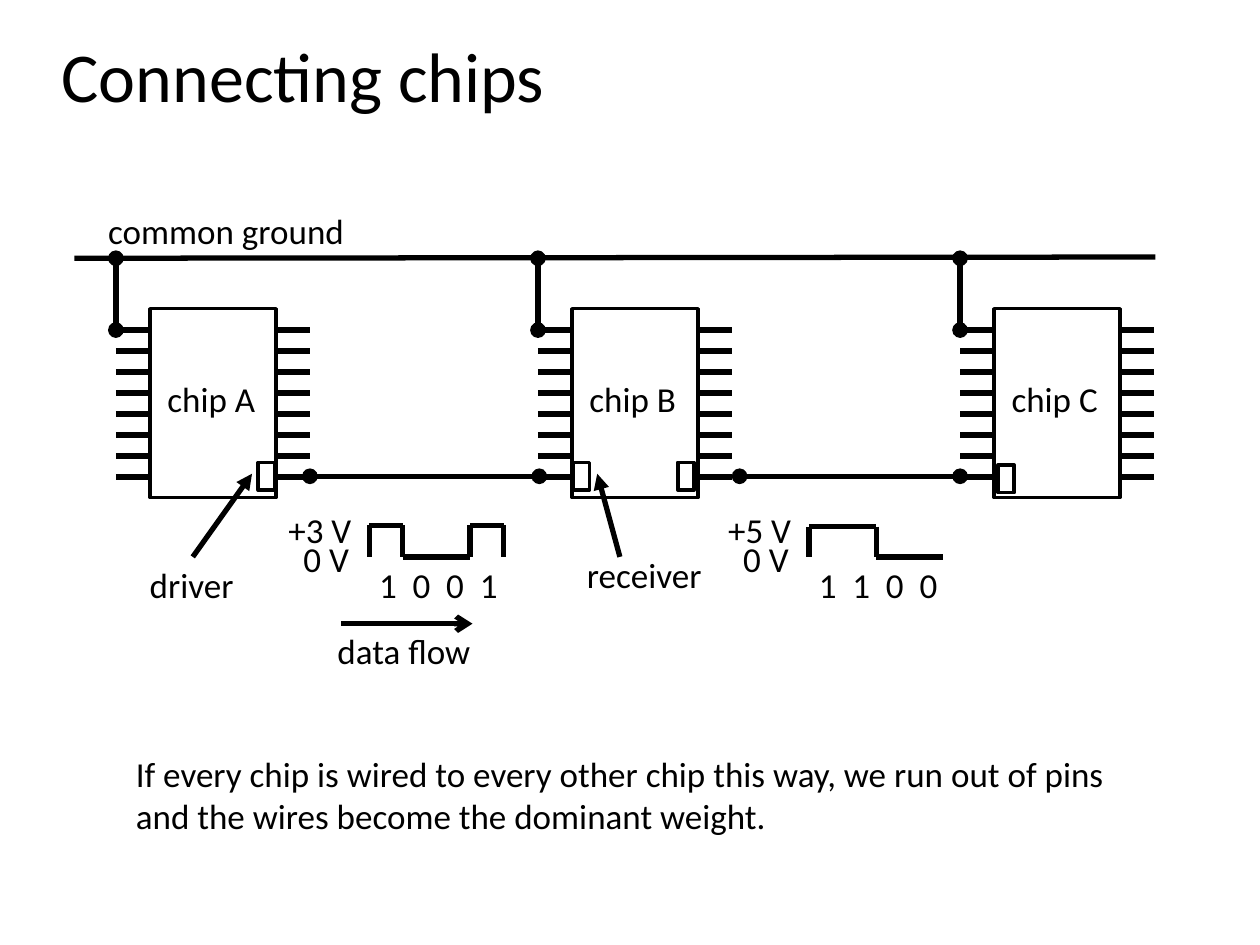
from lxml.etree import SubElement
from pptx import Presentation
from pptx.dml.color import RGBColor
from pptx.enum.shapes import MSO_CONNECTOR, MSO_SHAPE
from pptx.enum.text import MSO_ANCHOR, MSO_AUTO_SIZE, PP_ALIGN
from pptx.oxml.ns import qn
from pptx.util import Inches, Pt

BLACK = RGBColor(0, 0, 0)
FONT = "Calibri"

# Content: positions and sizes in inches
TITLE = "Connecting chips"
CHIPS = [("chip A", 1.19), ("chip B", 4.54), ("chip C", 7.89)]
PORTS = [(2.05, 3.67), (4.55, 3.67), (5.38, 3.67), (7.92, 3.69)]
DATA_WIRES = [(2.46, 4.28), (5.87, 7.62)]
SIGNALS = [
    {"bits": "1001", "volts": "+3 V", "left": 2.93, "high": 4.17},
    {"bits": "1100", "volts": "+5 V", "left": 6.42, "high": 4.18},
]
LABELS = [
    ("common ground", 0.76, 1.61, 2.25),
    ("driver", 1.09, 4.42, 0.87),
    ("receiver", 4.56, 4.34, 1.12),
    ("data flow", 2.58, 4.95, 1.27),
]
POINTERS = [((1.53, 4.42), (2, 3.76)), ((4.92, 4.42), (4.74, 3.76))]
NOTE = ("If every chip is wired to every other chip this way, "
        "we run out of pins and the wires become the dominant weight.")

CHIP_TOP, CHIP_WIDTH, CHIP_HEIGHT = 2.45, 1, 1.5
PIN_COUNT, PIN_LENGTH = 8, 0.27
PIN_TOP, PIN_GAP = 2.62, 1 / 6
DATA_Y = 3.78
GROUND_Y = 2.05
BIT_WIDTH = 0.267
LOW_Y = 4.42

deck = Presentation()
deck.slide_width, deck.slide_height = Inches(10), Inches(7.5)
page = deck.slides.add_slide(deck.slide_layouts[5])


def write(box, text, size=20, wrap=False, tracking=None):
    frame = box.text_frame
    frame.word_wrap = wrap
    frame.auto_size = MSO_AUTO_SIZE.NONE
    frame.vertical_anchor = MSO_ANCHOR.TOP
    para = frame.paragraphs[0]
    para.alignment = PP_ALIGN.LEFT
    span = para.add_run()
    span.text = text
    span.font.size = Pt(size)
    span.font.name = FONT
    span.font.color.rgb = BLACK
    if tracking:
        span.font._element.set("spc", str(tracking))


def add_label(text, left, top, width, height=0.44, **style):
    box = page.shapes.add_textbox(
        Inches(left), Inches(top), Inches(width), Inches(height))
    write(box, text, **style)


def add_line(start, end, head=None, tail=None):
    wire = page.shapes.add_connector(
        MSO_CONNECTOR.STRAIGHT, *map(Inches, (*start, *end)))
    wire.line.color.rgb = BLACK
    wire.line.width = Pt(3)
    outline = wire.line._get_or_add_ln()
    for tag, kind in (("a:headEnd", head), ("a:tailEnd", tail)):
        if kind:
            SubElement(outline, qn(tag), type=kind)
    SubElement(wire._element.spPr, qn("a:effectLst"))


def add_outline(left, top, width, height):
    box = page.shapes.add_shape(
        MSO_SHAPE.RECTANGLE, *map(Inches, (left, top, width, height)))
    box.fill.background()
    box.line.color.rgb = BLACK
    box.line.width = Pt(2)
    box.shadow.inherit = False


# Title
title = page.shapes.title
title.left, title.top = Inches(0.39), Inches(0.21)
title.width, title.height = Inches(4.07), Inches(0.77)
write(title, TITLE, size=40)

# Chips with pins, names and ground wires
for name, left in CHIPS:
    right = left + CHIP_WIDTH
    add_outline(left, CHIP_TOP, CHIP_WIDTH, CHIP_HEIGHT)
    for pin in range(PIN_COUNT):
        y = PIN_TOP + pin * PIN_GAP
        add_line((left - PIN_LENGTH, y), (left, y))
        add_line((right, y), (right + PIN_LENGTH, y))
    add_line((left - PIN_LENGTH, PIN_TOP), (left - PIN_LENGTH, GROUND_Y),
             head="oval", tail="oval")
    add_label(name, left + 0.04, 2.95, 0.96)

# Common ground and data wires
add_line((0.59, GROUND_Y), (9.17, 2.04))
for start, end in DATA_WIRES:
    add_line((end, DATA_Y), (start, DATA_Y), head="oval", tail="oval")

# Drivers and receivers
for left, top in PORTS:
    add_outline(left, top, 0.13, 0.22)
for start, end in POINTERS:
    add_line(start, end, tail="triangle")

# Signals: one level per bit, an edge wherever the level changes
for signal in SIGNALS:
    bits, left, high = signal["bits"], signal["left"], signal["high"]
    for i, bit in enumerate(bits):
        y = high if bit == "1" else LOW_Y
        add_line((left + i * BIT_WIDTH, y), (left + (i + 1) * BIT_WIDTH, y))
    levels = "0" + bits + "0"
    for i, (before, after) in enumerate(zip(levels, levels[1:])):
        if before != after:
            x = left + i * BIT_WIDTH
            add_line((x, high), (x, LOW_Y))
    add_label(" ".join(bits), left - 0.02, LOW_Y, 1.18, tracking=226)
    add_label("0 V", left - 0.62, 4.22, 0.57)
    add_label(signal["volts"], left - 0.74, 3.99, 0.71)

# Labels, data flow arrow and closing note
for text, left, top, width in LABELS:
    add_label(text, left, top, width)
add_line((2.71, 4.95), (3.75, 4.95), tail="arrow")
add_label(NOTE, 0.98, 5.92, 8.27, height=0.77, wrap=True)

deck.save("out.pptx")
